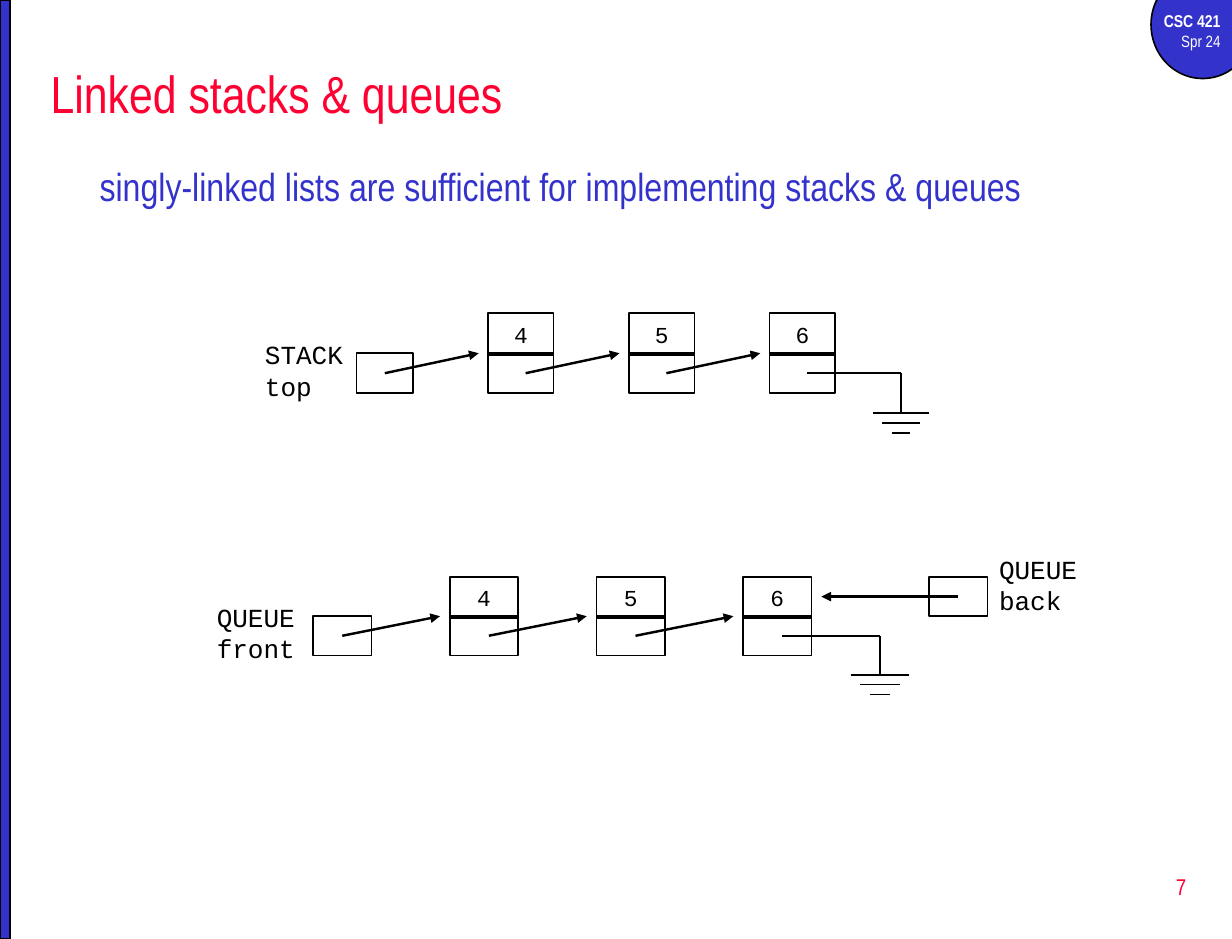
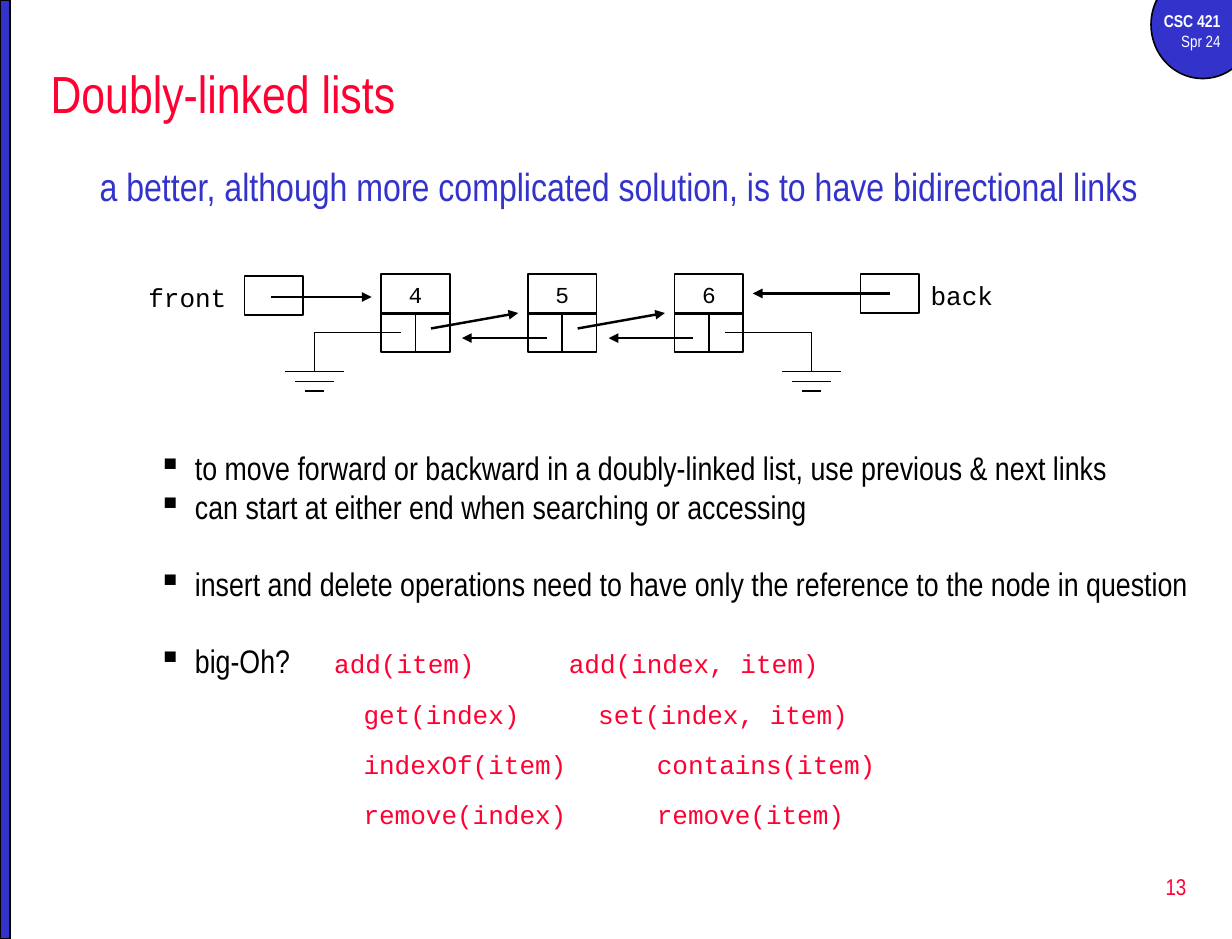
"""Builds two lecture slides on linked stacks, queues and doubly-linked lists."""
from dataclasses import dataclass

from lxml import etree
from pptx import Presentation
from pptx.dml.color import RGBColor
from pptx.enum.shapes import MSO_CONNECTOR, MSO_SHAPE
from pptx.enum.text import MSO_ANCHOR, PP_ALIGN
from pptx.oxml.ns import qn
from pptx.util import Pt

RECT, OVAL = MSO_SHAPE.RECTANGLE, MSO_SHAPE.OVAL
STRAIGHT = MSO_CONNECTOR.STRAIGHT
TOP, MIDDLE = MSO_ANCHOR.TOP, MSO_ANCHOR.MIDDLE
LEFT, CENTER, RIGHT = PP_ALIGN.LEFT, PP_ALIGN.CENTER, PP_ALIGN.RIGHT

COLORS = {"blue": "3333CC", "red": "FF0033", "black": "000000", "white": "FFFFFF"}
SANS, MONO = "Arial Narrow", "Courier New"
WIDTH, HEIGHT = 756, 576
VALUES = ("4", "5", "6")


@dataclass(frozen=True)
class Style:
    size: float
    color: str = "black"
    font: str = SANS
    bold: bool = False


@dataclass(frozen=True)
class Line:
    runs: tuple
    before: float = 0
    margin: float = 0
    hanging: float = 0
    spacing: float = 1.0
    bullet: str = ""


@dataclass(frozen=True)
class Chain:
    """Linked nodes on a grid of units, with a value row above a link row."""
    left: float
    top: float
    unit: float
    cell: float

    def node(self, index: int) -> float:
        return self.left + 15 * self.unit * index

    @property
    def links(self) -> float:
        return self.top + self.cell

    @property
    def middle(self) -> float:
        return self.top + 1.5 * self.cell

    @property
    def front(self) -> float:
        return self.left - 14 * self.unit


TITLE = Style(32, "red")
SUBTITLE = Style(24, "blue")
NUMBER = Style(14, "red")
COURSE = Style(10.5, "white", bold=True)
TERM = Style(10, "white")
LABEL = Style(16, font=MONO)
VALUE = Style(14, font=MONO)
POINT = Style(20)
CODE = Style(16, "red", MONO)

STACK = Chain(299.5, 192.2, 5.76, 24.5)
QUEUE = Chain(276, 354, 6, 24)
DOUBLE = Chain(234, 168, 6, 24)


def point(*runs: tuple, before: float = 4.7) -> Line:
    """Return a bulleted line."""
    return Line(runs, before, 58.5, 22.5, 0.8, "▪")


def method(text: str) -> Line:
    """Return an indented line of method names."""
    return Line(((text, CODE),), 15.3, 162, 0, 0.8)


POINTS = (
    point(("to move forward or backward in a doubly‑linked list, use previous & next links", POINT)),
    point(("can start at either end when searching or accessing", POINT)),
    point(("insert and delete operations need to have only the reference to the node in question", POINT),
          before=28),
    point(("big-Oh?\t", POINT), ("add(item)\t\tadd(index, item)", CODE), before=28),
    method("get(index)\t\tset(index, item)"),
    method("indexOf(item)\t\tcontains(item)"),
    method("remove(index)\t\tremove(item)"),
)


def rgb(name: str) -> RGBColor:
    """Return a named colour."""
    return RGBColor.from_string(COLORS[name])


def write(frame, lines: tuple, align=LEFT, anchor=TOP) -> None:
    """Fill a text frame with lines, run by run."""
    frame.word_wrap = True
    frame.vertical_anchor = anchor
    for index, line in enumerate(lines):
        paragraph = frame.add_paragraph() if index else frame.paragraphs[0]
        paragraph.alignment = align
        paragraph.line_spacing = line.spacing
        paragraph.space_before = Pt(line.before)
        properties = paragraph._p.get_or_add_pPr()
        properties.set("marL", str(Pt(line.margin)))
        properties.set("indent", str(-Pt(line.hanging)))
        if line.bullet:
            etree.SubElement(properties, qn("a:buChar")).set("char", line.bullet)
        for text, style in line.runs:
            run = paragraph.add_run()
            run.text = text
            run.font.name, run.font.size = style.font, Pt(style.size)
            run.font.bold = style.bold
            run.font.color.rgb = rgb(style.color)


def add_text(slide, x: float, y: float, w: float, h: float, lines: tuple,
             align=LEFT, anchor=TOP) -> None:
    """Add a text box."""
    box = slide.shapes.add_textbox(Pt(x), Pt(y), Pt(w), Pt(h))
    write(box.text_frame, lines, align, anchor)


def add_box(slide, x: float, y: float, w: float, h: float, kind=RECT,
            fill: str = "", text: str = "") -> None:
    """Add an outlined shape, with an optional fill and value."""
    box = slide.shapes.add_shape(kind, Pt(x), Pt(y), Pt(w), Pt(h))
    box.shadow.inherit = False
    box.line.color.rgb, box.line.width = rgb("black"), Pt(1)
    if fill:
        box.fill.solid()
        box.fill.fore_color.rgb = rgb(fill)
    else:
        box.fill.background()
    if text:
        write(box.text_frame, (Line(((text, VALUE),)),), CENTER, MIDDLE)


def add_line(slide, x1: float, y1: float, x2: float, y2: float, arrow: bool = False) -> None:
    """Add a thin line, or a thicker arrow."""
    line = slide.shapes.add_connector(STRAIGHT, Pt(x1), Pt(y1), Pt(x2), Pt(y2))
    line.line.color.rgb, line.line.width = rgb("black"), Pt(1.5 if arrow else 1)
    properties = line._element.spPr
    if arrow:
        etree.SubElement(properties.find(qn("a:ln")), qn("a:tailEnd")).set("type", "triangle")
    etree.SubElement(properties, qn("a:effectLst"))


def add_label(slide, chain: Chain, x: float, y: float, *words: str) -> None:
    """Add a pointer's name, one word to a line."""
    lines = tuple(Line(((word, LABEL),)) for word in words)
    add_text(slide, x, y, 11 * chain.unit, 8 + 19 * len(words), lines)


def add_nodes(slide, chain: Chain) -> None:
    """Draw the value and link cells of a chain."""
    for index, value in enumerate(VALUES):
        x, width = chain.node(index), 7 * chain.unit
        add_box(slide, x, chain.links, width, chain.cell)
        add_box(slide, x, chain.top, width, chain.cell + 1, text=value)


def add_ground(slide, chain: Chain, start: float, x: float) -> None:
    """Draw the null symbol that ends a chain."""
    bottom = chain.middle + chain.cell
    add_line(slide, start, chain.middle, x, chain.middle)
    add_line(slide, x, chain.middle, x, bottom)
    for step, half in enumerate((3, 2, 1)):
        y = bottom + step * chain.cell / 4
        add_line(slide, x - half * chain.unit, y, x + half * chain.unit, y)


def add_front(slide, chain: Chain, y: float) -> None:
    """Draw the box of the front pointer."""
    add_box(slide, chain.front, y, 6 * chain.unit, chain.cell)


def add_back(slide, chain: Chain, label_top: float, *words: str) -> None:
    """Draw the back pointer with its arrow and name."""
    u, last = chain.unit, chain.node(2)
    y = chain.top + chain.cell / 2
    add_box(slide, last + 19 * u, chain.top, 6 * u, chain.cell)
    add_line(slide, last + 22 * u, y, last + 8 * u, y, arrow=True)
    add_label(slide, chain, last + 25 * u, label_top, *words)


def add_single_chain(slide, chain: Chain, *words: str) -> None:
    """Draw a singly-linked chain with its front pointer."""
    u = chain.unit
    add_nodes(slide, chain)
    add_front(slide, chain, chain.links)
    add_label(slide, chain, chain.front - 11 * u, chain.links - 12.5, *words)
    starts = (chain.front + 3 * u, chain.node(0) + 4 * u, chain.node(1) + 4 * u)
    for index, start in enumerate(starts):
        add_line(slide, start, chain.middle, chain.node(index) - u, chain.links, arrow=True)
    add_ground(slide, chain, chain.node(2) + 4 * u, chain.node(2) + 14 * u)


def add_double_chain(slide, chain: Chain) -> None:
    """Draw a doubly-linked chain with pointers at both ends."""
    u, front_top = chain.unit, chain.top + 1.2
    add_nodes(slide, chain)
    add_front(slide, chain, front_top)
    add_label(slide, chain, chain.front - 11 * u, front_top, "front")
    add_line(slide, chain.front + 16.3, front_top + 13, chain.left - u, front_top + 13, arrow=True)
    add_back(slide, chain, chain.top, "back")
    for index in range(len(VALUES)):
        divider = chain.node(index) + 3.5 * u
        add_line(slide, divider, chain.links, divider, chain.links + chain.cell)
    for index in range(len(VALUES) - 1):
        here, after = chain.node(index), chain.node(index + 1)
        add_line(slide, here + 30.5, chain.links + 9.5, after - u, chain.links, arrow=True)
        previous = chain.links + 15.4
        add_line(slide, after + 11.5, previous, here + 49.5, previous, arrow=True)
    add_ground(slide, chain, chain.left + 12, chain.left - 41)
    add_ground(slide, chain, chain.node(2) + 31, chain.node(2) + 84)


def add_page(deck, title: str, subtitle: str, number: str):
    """Add a slide with the shared band, badge, headings and page number."""
    slide = deck.slides.add_slide(deck.slide_layouts[6])
    add_box(slide, 706.3, -18, 63.4, 66.2, OVAL, "blue")
    badge = (Line((("CSC 421", COURSE),)), Line((("Spr 24", TERM),)))
    add_text(slide, 696.2, 2.9, 59.8, 33.1, badge, RIGHT)
    add_box(slide, 0, 0, 6, HEIGHT, fill="blue")
    add_text(slide, 24, 30, 714, 54, (Line(((title, TITLE),)),), anchor=MIDDLE)
    add_text(slide, 54, 96, 685.4, 54, (Line(((subtitle, SUBTITLE),)),))
    add_text(slide, 577.4, 525, 157.7, 38, (Line(((number, NUMBER),)),), RIGHT, MIDDLE)
    return slide


def main() -> None:
    """Build and save the deck."""
    deck = Presentation()
    deck.slide_width, deck.slide_height = Pt(WIDTH), Pt(HEIGHT)

    single = add_page(deck, "Linked stacks & queues",
                      "singly-linked lists are sufficient for implementing stacks & queues", "7")
    add_single_chain(single, STACK, "STACK", "top")
    add_single_chain(single, QUEUE, "QUEUE", "front")
    add_back(single, QUEUE, QUEUE.top - 18, "QUEUE", "back")

    double = add_page(deck, "Doubly-linked lists",
                      "a better, although more complicated solution, is to have bidirectional links", "13")
    add_double_chain(double, DOUBLE)
    add_text(double, 54, 276, 685.4, 258, POINTS)

    deck.save("out.pptx")


if __name__ == "__main__":
    main()
